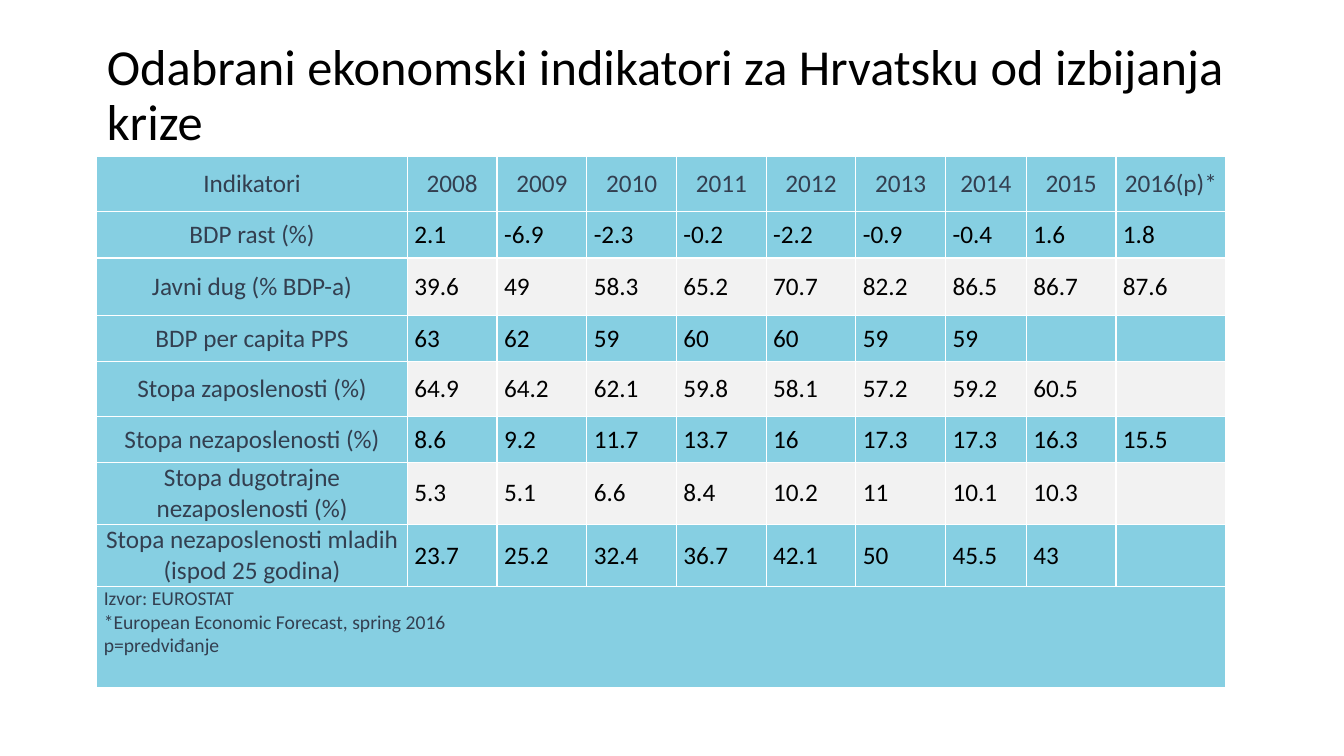
"""Build a slide with a table of economic indicators for Croatia."""
from lxml.etree import SubElement
from pptx import Presentation
from pptx.dml.color import RGBColor
from pptx.enum.text import MSO_ANCHOR as Anchor, PP_ALIGN as Align
from pptx.oxml.ns import qn
from pptx.util import Inches, Pt

FONT = "Calibri"
BLACK = RGBColor(0x00, 0x00, 0x00)
SLATE = RGBColor(0x33, 0x3F, 0x50)
SKY = RGBColor(0x86, 0xCF, 0xE2)
PALE = RGBColor(0xF2, 0xF2, 0xF2)
WHITE = RGBColor(0xFF, 0xFF, 0xFF)

LEFT, TABLE_TOP = 0.96, 1.55
YEAR_WIDTH = 0.89
COLUMN_WIDTHS = [3.08] + [YEAR_WIDTH] * 6 + [0.8, YEAR_WIDTH, 1.09]
ROW_HEIGHTS = [0.55, 0.46, 0.57, 0.46, 0.54, 0.46, 0.61, 0.62, 1.0]

TITLE = "Odabrani ekonomski indikatori za Hrvatsku od izbijanja krize"
HEADER = ["Indikatori", *map(str, range(2008, 2016)), "2016(p)*"]
INDICATORS = [
    ("BDP rast (%)", "2.1 -6.9 -2.3 -0.2 -2.2 -0.9 -0.4 1.6 1.8"),
    ("Javni dug (% BDP-a)", "39.6 49 58.3 65.2 70.7 82.2 86.5 86.7 87.6"),
    ("BDP per capita PPS", "63 62 59 60 60 59 59"),
    ("Stopa zaposlenosti (%)", "64.9 64.2 62.1 59.8 58.1 57.2 59.2 60.5"),
    ("Stopa nezaposlenosti (%)", "8.6 9.2 11.7 13.7 16 17.3 17.3 16.3 15.5"),
    ("Stopa dugotrajne nezaposlenosti (%)", "5.3 5.1 6.6 8.4 10.2 11 10.1 10.3"),
    ("Stopa nezaposlenosti mladih (ispod 25 godina)",
     "23.7 25.2 32.4 36.7 42.1 50 45.5 43"),
]
NOTES = ["Izvor: EUROSTAT", "*European Economic Forecast, spring 2016", "p=predviđanje"]


def write_text(frame, *lines, size=18, color=BLACK, align=Align.LEFT, spacing=1.0):
    """Write each line as a formatted paragraph of the text frame."""
    for index, line in enumerate(lines):
        paragraph = frame.add_paragraph() if index else frame.paragraphs[0]
        paragraph.alignment = align
        paragraph.line_spacing = spacing
        run = paragraph.add_run()
        run.text = line
        run.font.name = FONT
        run.font.size = Pt(size)
        run.font.color.rgb = color


def style_cell(cell, fill, anchor=Anchor.MIDDLE):
    """Give a cell its margins, white borders and fill."""
    cell.margin_left = cell.margin_right = Inches(0.07)
    cell.margin_top = cell.margin_bottom = 0
    cell.vertical_anchor = anchor
    properties = cell._tc.get_or_add_tcPr()
    for side in ("a:lnL", "a:lnR", "a:lnT", "a:lnB"):
        border = SubElement(properties, qn(side), w=str(Pt(1)))
        solid = SubElement(border, qn("a:solidFill"))
        SubElement(solid, qn("a:srgbClr"), val=str(WHITE))
    cell.fill.solid()
    cell.fill.fore_color.rgb = fill


def add_title(slide):
    """Place and format the title placeholder."""
    title = slide.shapes.title
    title.left, title.top = Inches(LEFT), Inches(0.37)
    title.width, title.height = Inches(11.91), Inches(1.18)
    title.text_frame.word_wrap = True
    title.text_frame.vertical_anchor = Anchor.MIDDLE
    write_text(title.text_frame, TITLE, size=36, spacing=0.9)


def add_grid(slide):
    """Add an empty table with the column widths and row heights of the grid."""
    table = slide.shapes.add_table(
        len(ROW_HEIGHTS), len(COLUMN_WIDTHS), Inches(LEFT), Inches(TABLE_TOP),
        Inches(sum(COLUMN_WIDTHS)), Inches(sum(ROW_HEIGHTS))).table
    table.first_row = table.horz_banding = False
    for column, width in zip(table.columns, COLUMN_WIDTHS):
        column.width = Inches(width)
    for row, height in zip(table.rows, ROW_HEIGHTS):
        row.height = Inches(height)
    return table


def fill_table(table):
    """Write the header, the indicator rows and the merged notes row."""
    rows = [HEADER] + [[label, *values.split()] for label, values in INDICATORS]
    for row_index, texts in enumerate(rows):
        banded = row_index > 0 and row_index % 2 == 0
        for column_index in range(len(COLUMN_WIDTHS)):
            cell = table.cell(row_index, column_index)
            heading = row_index == 0 or column_index == 0
            style_cell(cell, PALE if banded and not heading else SKY)
            if column_index < len(texts):
                write_text(cell.text_frame, texts[column_index],
                           color=SLATE if heading else BLACK,
                           align=Align.CENTER if heading else Align.LEFT)
    last_row = len(rows)
    notes = table.cell(last_row, 0)
    notes.merge(table.cell(last_row, len(COLUMN_WIDTHS) - 1))
    style_cell(notes, SKY, Anchor.TOP)
    write_text(notes.text_frame, *NOTES, size=14, color=SLATE, align=Align.JUSTIFY)


def main():
    """Create the presentation and save it."""
    presentation = Presentation()
    presentation.slide_width, presentation.slide_height = Inches(13.33), Inches(7.5)
    slide = presentation.slides.add_slide(presentation.slide_layouts.get_by_name("Title Only"))
    add_title(slide)
    fill_table(add_grid(slide))
    presentation.save("out.pptx")


if __name__ == "__main__":
    main()
